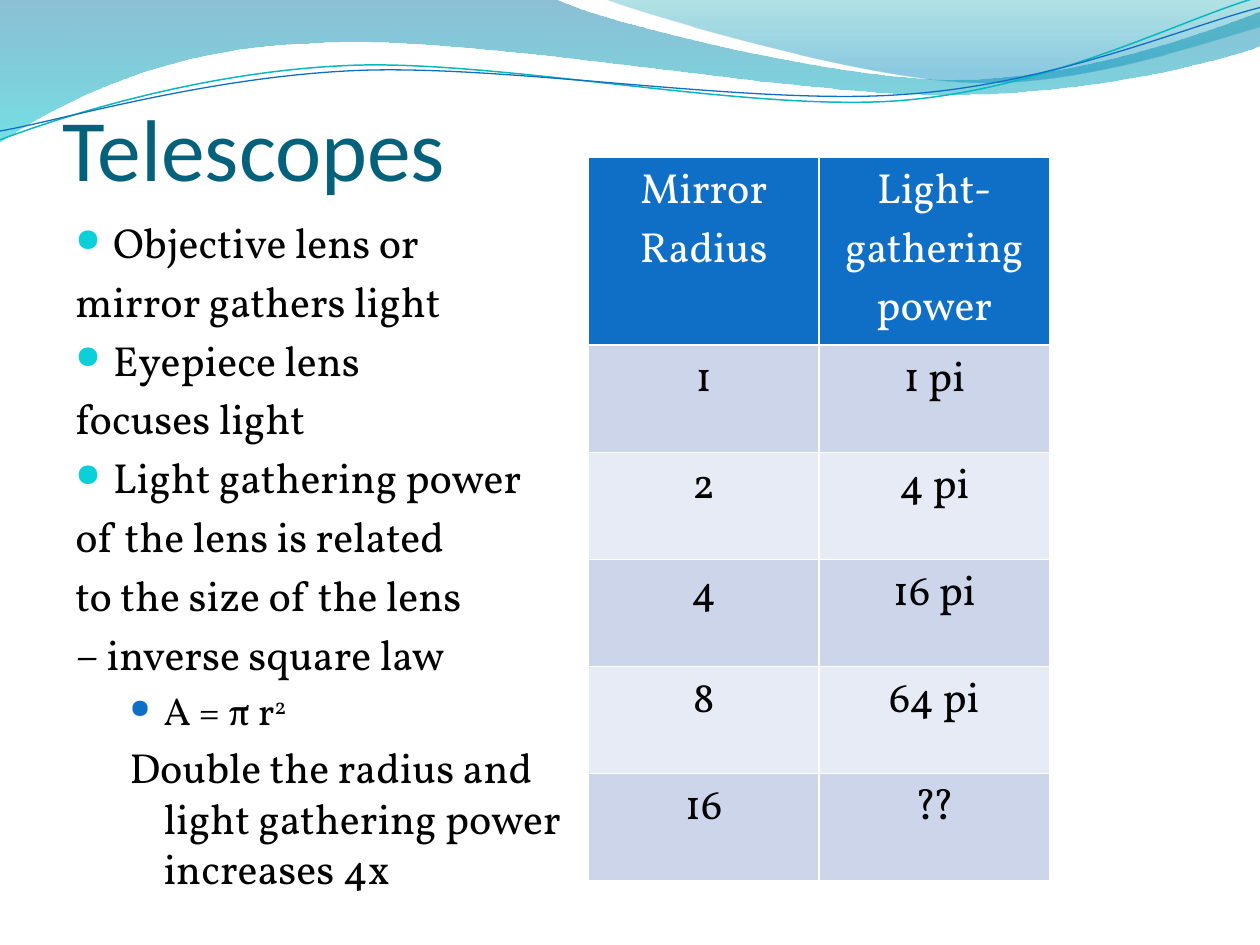
from lxml.etree import SubElement
from pptx import Presentation
from pptx.dml.color import RGBColor
from pptx.enum.text import MSO_ANCHOR, PP_ALIGN
from pptx.oxml.ns import qn
from pptx.util import Inches, Pt


class Theme:
    head, text = "Calibri", "Vollkorn"
    title, body, sub, cell = 50, 24, 22.2, 24
    ink, white, teal = "000000", "FFFFFF", "04617B"
    blue, aqua, sea = "0F6FC6", "0BD0D9", "0AB8BF"
    bands = "CCD5EA", "E7EBF5"


def rgb(code):
    return RGBColor.from_string(code)


class Deck:
    def __init__(self, theme):
        self.theme = theme
        self.show = Presentation()
        self.show.slide_width, self.show.slide_height = Inches(10), Inches(7.5)
        self.slide = self.show.slides.add_slide(self.show.slide_layouts[6])

    def curve(self, start, parts, close):
        """Draw lines (x, y) and cubic curves (six numbers)."""
        pen = self.slide.shapes.build_freeform(*map(Inches, start), scale=1.0)
        for part in parts:
            spots = zip(part[::2], part[1::2])
            pen.add_line_segments([(Inches(x), Inches(y)) for x, y in spots],
                                  close=False)
        if close:
            pen.add_line_segments([], close=True)
        shape = pen.convert_to_shape()
        shape.shadow.inherit = False

        # Join each run of three lines that stands for a curve
        lines = iter(list(shape._element.iter(qn("a:lnTo"))))
        for part in parts:
            first = next(lines)
            if len(part) == 6:
                first.tag = qn("a:cubicBezTo")
                for _ in range(2):
                    other = next(lines)
                    first.append(other[0])
                    other.getparent().remove(other)
        return shape

    def wave(self, start, parts, stops):
        shape = self.curve(start, parts, True)
        shape.line.fill.background()
        shape.fill.gradient()
        shape.fill.gradient_angle = 270
        for stop, (place, code, _) in zip(shape.fill.gradient_stops, stops):
            stop.position = place
            stop.color.rgb = rgb(code)
        tones = shape._element.spPr.iter(qn("a:srgbClr"))
        for tone, (_, _, alpha) in zip(list(tones), stops):
            SubElement(tone, qn("a:alpha"), val=str(alpha * 1000))

    def strand(self, start, parts, code, width):
        shape = self.curve(start, parts, False)
        shape.fill.background()
        shape.line.color.rgb = rgb(code)
        shape.line.width = Pt(width)

    def style(self, para, face, size, code):
        para.font.name, para.font.size = face, Pt(size)
        para.font.color.rgb = rgb(code)

    def frame(self, left, top, width, height):
        box = self.slide.shapes.add_textbox(*map(Inches, (left, top, width, height)))
        box.text_frame.word_wrap = True
        return box.text_frame

    def title(self, text, *place):
        frame = self.frame(*place)
        frame.margin_left = frame.margin_right = frame.margin_bottom = 0
        frame.vertical_anchor = MSO_ANCHOR.BOTTOM
        frame.text = text
        self.style(frame.paragraphs[0], self.theme.head, self.theme.title,
                   self.theme.teal)

    def bullet(self, props, code, size):
        tone = SubElement(props, qn("a:buClr"))
        SubElement(tone, qn("a:srgbClr"), val=code)
        SubElement(props, qn("a:buSzPct"), val=str(size * 1000))
        SubElement(props, qn("a:buChar"), char="●")

    def body(self, items, *place):
        theme, frame = self.theme, self.frame(*place)
        for i, (text, level, mark, size, power) in enumerate(items):
            para = frame.add_paragraph() if i else frame.paragraphs[0]
            para.level = level
            para.space_before = Pt(4.8 if i else 0)
            props = para._p.get_or_add_pPr()
            left, hang = ((0.3, -0.3), (0.7, -0.27))[level]
            props.set("marL", str(Inches(left)))
            props.set("indent", str(Inches(hang)))
            if mark:
                self.bullet(props, *((theme.aqua, 76), (theme.blue, 68))[level])
            para.add_run().text = text
            if power:
                run = para.add_run()
                run.text = power
                run.font._element.set("baseline", "30000")
            self.style(para, theme.text, size, theme.ink)

    def edges(self, cell):
        props = cell._tc.get_or_add_tcPr()
        for i, side in enumerate(("lnL", "lnR", "lnT", "lnB")):
            line = props.makeelement(qn("a:" + side), {"w": str(Pt(1))})
            fill = SubElement(line, qn("a:solidFill"))
            SubElement(fill, qn("a:srgbClr"), val=self.theme.white)
            props.insert(i, line)

    def table(self, rows, left, top, col, first, height):
        theme, count = self.theme, len(rows[0])
        table = self.slide.shapes.add_table(
            len(rows), count, Inches(left), Inches(top), Inches(col * count),
            Inches(first + height * (len(rows) - 1))).table
        for r, row in enumerate(rows):
            table.rows[r].height = Inches(height if r else first)
            for c, text in enumerate(row):
                cell = table.cell(r, c)
                cell.text = text
                cell.fill.solid()
                cell.fill.fore_color.rgb = rgb(
                    theme.bands[(r - 1) % 2] if r else theme.blue)
                self.edges(cell)
                para = cell.text_frame.paragraphs[0]
                para.alignment = PP_ALIGN.CENTER
                self.style(para, theme.text, theme.cell,
                           theme.ink if r else theme.white)


def main():
    theme = Theme()
    deck = Deck(theme)

    # Waves along the top
    deck.wave((0, 0), [
        (4.4, -0.01), (4.76, 0.17, 6.64, 0.63, 7.58, 0.63),
        (8.53, 0.63, 9.58, 0.26, 10, 0.09), (10.01, 0.36),
        (9.83, 0.44, 8.7, 0.76, 7.46, 0.75),
        (6.22, 0.75, 3.82, 0.28, 2.57, 0.34),
        (1.29, 0.36, 0.46, 0.83, -0.01, 1.13), (0, 0),
    ], [(0, "0074A1", 45), (1, "00C6CF", 55)])
    deck.wave((4.79, -0.01), [
        (5.09, 0.11, 6.82, 0.62, 7.69, 0.65),
        (8.56, 0.69, 9.61, 0.32, 10, 0.21), (10, 0), (4.79, -0.01),
    ], [(0, "00A1A9", 30), (0.8, "008BBF", 45)])
    deck.strand((0, 1.11), [
        (0.48, 0.93, 1.58, 0.57, 2.77, 0.52),
        (3.95, 0.47, 5.93, 0.89, 7.13, 0.8),
        (8.33, 0.71, 9.38, 0.15, 9.98, -0.02),
    ], theme.sea, 0.85)
    deck.strand((0, 1.04), [
        (0.47, 0.96, 1.64, 0.61, 2.83, 0.56),
        (4.03, 0.51, 5.97, 0.84, 7.17, 0.75),
        (8.36, 0.67, 9.41, 0.21, 10, 0.06),
    ], theme.blue, 0.75)

    # Title and points: text, level, bullet, size, superscript
    deck.title("Telescopes", 0.5, 0.33, 9, 1.25)
    lines = [
        ("Objective lens or", True), ("mirror gathers light", False),
        ("Eyepiece lens", True), ("focuses light", False),
        ("Light gathering power", True), ("of the lens is related", False),
        ("to the size of the lens", False), ("– inverse square law", False),
    ]
    items = [(text, 0, mark, theme.body, "") for text, mark in lines]
    items += [
        ("A = π r", 1, True, theme.sub, "2"),
        ("Double the radius and light gathering power increases 4x",
         1, False, theme.body, ""),
    ]
    deck.body(items, 0.5, 1.67, 4.08, 5.25)

    # Mirror table
    deck.table([
        ("Mirror Radius", "Light-gathering power"),
        ("1", "1 pi"), ("2", "4 pi"), ("4", "16 pi"), ("8", "64 pi"),
        ("16", "??"),
    ], 4.67, 1.25, 1.83, 1.49, 0.85)

    deck.show.save("out.pptx")


if __name__ == "__main__":
    main()
